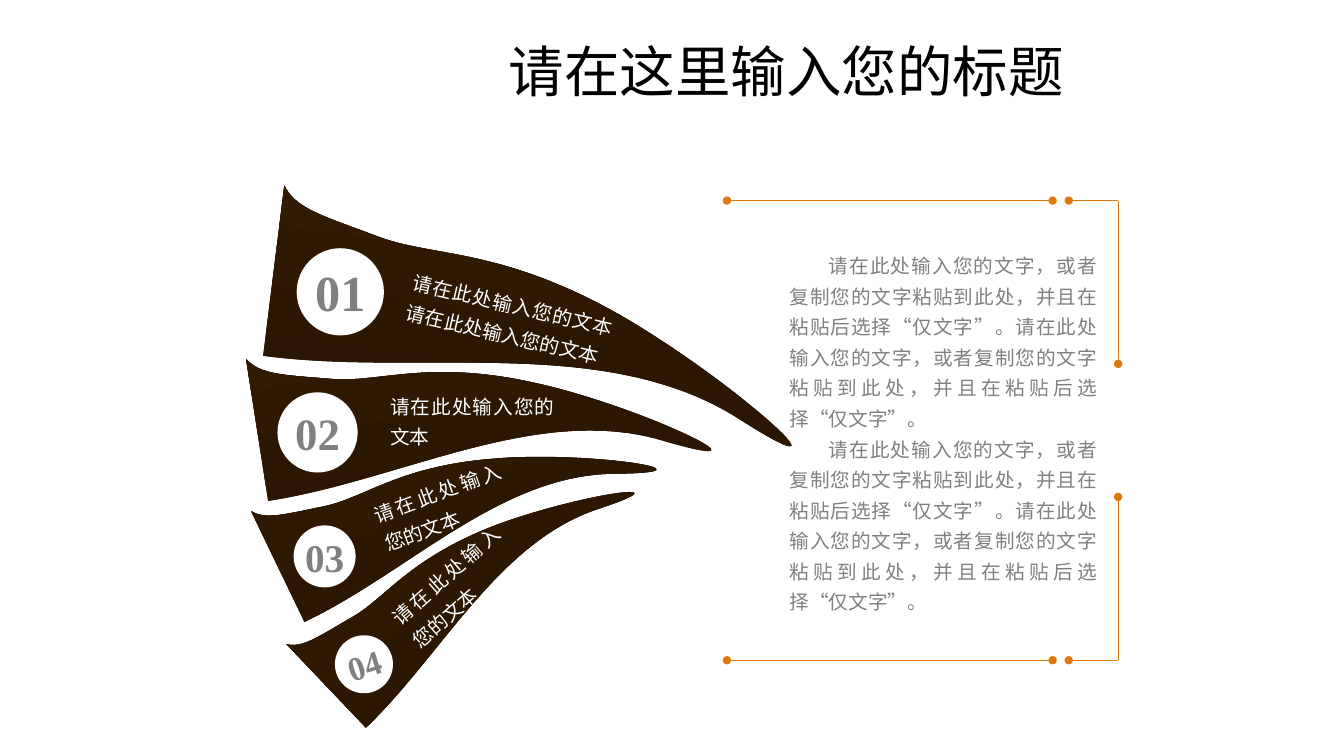
import math

import lxml.etree
import pptx
import pptx.dml.color
import pptx.enum.shapes
import pptx.enum.text
import pptx.oxml.ns
import pptx.util

PX = 9144  # EMU per px, 100 px to the inch
COLORS = {
    "white": "FFFFFF",
    "black": "000000",
    "gray": "808080",
    "orange": "E0790D",
    "horn_dark": "271502",
    "horn_light": "341C03",
}
CJK_FONT = "Noto Sans CJK SC"
ALIGN = pptx.enum.text.PP_ALIGN

LABEL = "请在此处输入您的文本"
SENTENCE = "请在此处输入您的文字，或者复制您的文字粘贴到此处，并且在粘贴后选择“仅文字”。"

# Each horn: its box before turning, then, as seen on the slide, two base
# corners and four cubic curves (two controls and an end)
HORNS = [
    {
        "box": (268, 217, 532, 192), "turn": 7.5,
        "base": [(261, 353), (282, 184)],
        "curves": [
            [(293, 207), (320, 214), (373, 234)],
            [(427, 255), (491, 245), (605, 307)],
            [(720, 370), (865, 500), (732, 415)],
            [(599, 331), (418, 374), (261, 353)],
        ],
        "number": "01", "circle": (297, 249, 81), "circle_turn": 0, "size": 36,
        "label": LABEL * 2, "label_box": (395, 281, 222, 66), "label_turn": 13,
    },
    {
        "box": (254, 322, 443, 160), "turn": 351.3,
        "base": [(266, 497), (244, 356)],
        "curves": [
            [(258, 372), (281, 372), (329, 376)],
            [(376, 380), (425, 356), (531, 380)],
            [(637, 403), (783, 474), (657, 437)],
            [(532, 400), (397, 477), (266, 497)],
        ],
        "number": "02", "circle": (278, 392, 74), "circle_turn": 0, "size": 32,
        "label": LABEL, "label_box": (377, 380, 183, 70), "label_turn": 0,
    },
    {
        "box": (260, 418, 381, 138), "turn": 334.4,
        "base": [(302, 617), (249, 507)],
        "curves": [
            [(264, 516), (283, 510), (323, 502)],
            [(363, 493), (397, 462), (491, 455)],
            [(584, 447), (722, 469), (609, 470)],
            [(496, 471), (405, 568), (302, 617)],
        ],
        "number": "03", "circle": (294, 524, 56), "circle_turn": 0, "size": 28,
        "label": LABEL, "label_box": (362, 465, 152, 70), "label_turn": 340,
    },
    {
        "box": (280, 500, 355, 128), "turn": 316.7,
        "base": [(363, 722), (284, 639)],
        "curves": [
            [(300, 643), (315, 632), (348, 613)],
            [(382, 594), (403, 557), (484, 524)],
            [(564, 492), (693, 472), (593, 505)],
            [(494, 538), (439, 649), (363, 722)],
        ],
        "number": "04", "circle": (335, 633, 52), "circle_turn": 342.3, "size": 24,
        "label": LABEL, "label_box": (373, 551, 154, 58), "label_turn": 318.5,
    },
]

# Frame lines: from, to, dot at the start, dot at the end
FRAME_LEFT, FRAME_RIGHT, FRAME_TOP, FRAME_BOTTOM = 721, 1109, 199, 655
FRAME_LINES = [
    ((FRAME_LEFT, FRAME_TOP), (1044, FRAME_TOP), True, True),
    ((1060, FRAME_TOP), (FRAME_RIGHT, FRAME_TOP), True, False),
    ((FRAME_RIGHT, FRAME_TOP), (FRAME_RIGHT, 361), False, True),
    ((FRAME_LEFT, FRAME_BOTTOM), (1044, FRAME_BOTTOM), True, True),
    ((1060, FRAME_BOTTOM), (FRAME_RIGHT, FRAME_BOTTOM), True, False),
    ((FRAME_RIGHT, 493), (FRAME_RIGHT, FRAME_BOTTOM), True, False),
]


def rgb(name):
    return pptx.dml.color.RGBColor.from_string(COLORS[name])


def px(*lengths):
    return [pptx.util.Emu(round(length * PX)) for length in lengths]


def add_xml(parent, tag, **attributes):
    return lxml.etree.SubElement(parent, pptx.oxml.ns.qn(tag), attributes)


def write(frame, text, size, color, font=CJK_FONT, bold=False, align=ALIGN.JUSTIFY,
          spacing=1.3, indent=0, insets=(10, 5)):
    frame.word_wrap = True
    frame.vertical_anchor = pptx.enum.text.MSO_ANCHOR.MIDDLE
    frame.margin_left, frame.margin_top = px(*insets)
    frame.margin_right, frame.margin_bottom = px(*insets)
    frame.text = text
    for paragraph in frame.paragraphs:
        paragraph.alignment = align
        paragraph.line_spacing = spacing
        if indent:
            properties = paragraph._p.get_or_add_pPr()
            properties.set("marL", "0")
            properties.set("indent", str(indent * PX))
        for run in paragraph.runs:
            run.font.name = font
            run.font.size = pptx.util.Pt(size)
            run.font.bold = bold
            run.font.color.rgb = rgb(color)
            add_xml(run._r.get_or_add_rPr(), "a:ea", typeface=CJK_FONT)


def add_text(slide, box, text, size, color, turn=0, **style):
    caption = slide.shapes.add_textbox(*px(*box))
    caption.rotation = turn
    write(caption.text_frame, text, size, color, **style)


def turn_back(point, box, turn):
    """Place of a slide point inside the box before the box was turned."""
    left, top, width, height = box
    angle = math.radians(turn)
    dx, dy = point[0] - left - width / 2, point[1] - top - height / 2
    return (dx * math.cos(angle) + dy * math.sin(angle) + width / 2,
            dy * math.cos(angle) - dx * math.sin(angle) + height / 2)


def add_horn(slide, box, turn, base, curves):
    builder = slide.shapes.build_freeform(*px(*base[0]))
    builder.add_line_segments([px(*base[1])], close=True)
    horn = builder.convert_to_shape()
    horn.left, horn.top, horn.width, horn.height = px(*box)
    horn.rotation = turn

    # Curved outline
    outline = horn._element.spPr.find(".//" + pptx.oxml.ns.qn("a:path"))
    for segment in list(outline):
        outline.remove(segment)
    outline.set("w", str(horn.width))
    outline.set("h", str(horn.height))
    segments = [("a:moveTo", base[:1]), ("a:lnTo", base[1:])]
    segments += [("a:cubicBezTo", curve) for curve in curves]
    for tag, points in segments:
        segment = add_xml(outline, tag)
        for point in points:
            x, y = px(*turn_back(point, box, turn))
            add_xml(segment, "a:pt", x=str(x), y=str(y))
    add_xml(outline, "a:close")

    horn.shadow.inherit = False
    horn.line.fill.background()
    horn.fill.gradient()
    horn.fill.gradient_angle = 90
    for stop, name in zip(horn.fill.gradient_stops, ("horn_dark", "horn_light")):
        stop.color.rgb = rgb(name)


def add_number(slide, circle, text, size, turn):
    left, top, diameter = circle
    disc = slide.shapes.add_shape(
        pptx.enum.shapes.MSO_SHAPE.OVAL, *px(left, top, diameter, diameter))
    disc.rotation = turn
    disc.shadow.inherit = False
    disc.fill.solid()
    disc.fill.fore_color.rgb = rgb("white")
    disc.line.color.rgb = rgb("white")
    disc.line.width = pptx.util.Pt(4)
    write(disc.text_frame, text, size, "gray", font="Times New Roman", bold=True,
          align=ALIGN.CENTER, spacing=1.0, insets=(0, 0))


def add_frame_line(slide, start, end, start_dot, end_dot):
    rule = slide.shapes.add_connector(
        pptx.enum.shapes.MSO_CONNECTOR.STRAIGHT, *px(*start, *end))
    rule.line.color.rgb = rgb("orange")
    rule.line.width = pptx.util.Pt(0.5)
    stroke = rule.line._get_or_add_ln()
    for tag, dotted in (("a:headEnd", start_dot), ("a:tailEnd", end_dot)):
        if dotted:
            add_xml(stroke, tag, type="oval")
    add_xml(rule._element.spPr, "a:effectLst")


def main():
    deck = pptx.Presentation()
    deck.slide_width, deck.slide_height = px(1333, 750)
    slide = deck.slides.add_slide(deck.slide_layouts[6])

    # Numbered horns; the last one lies over the labels of the others
    for group in (HORNS[:3], HORNS[3:]):
        for horn in group:
            add_horn(slide, horn["box"], horn["turn"], horn["base"], horn["curves"])
        for horn in group:
            add_number(slide, horn["circle"], horn["number"], horn["size"],
                       horn["circle_turn"])
        for horn in group:
            add_text(slide, horn["label_box"], horn["label"], 14, "white",
                     turn=horn["label_turn"])

    # Description and its frame
    add_text(slide, (771, 199, 329, 456), "\n".join([SENTENCE * 2] * 2), 14, "gray",
             indent=39, insets=(12, 5))
    for line in FRAME_LINES:
        add_frame_line(slide, *line)

    # Title
    add_text(slide, (495, 41, 857, 66), "请在这里输入您的标题", 39.6, "black",
             font="Calibri", align=ALIGN.LEFT, spacing=0.9)

    deck.save("out.pptx")


if __name__ == "__main__":
    main()
